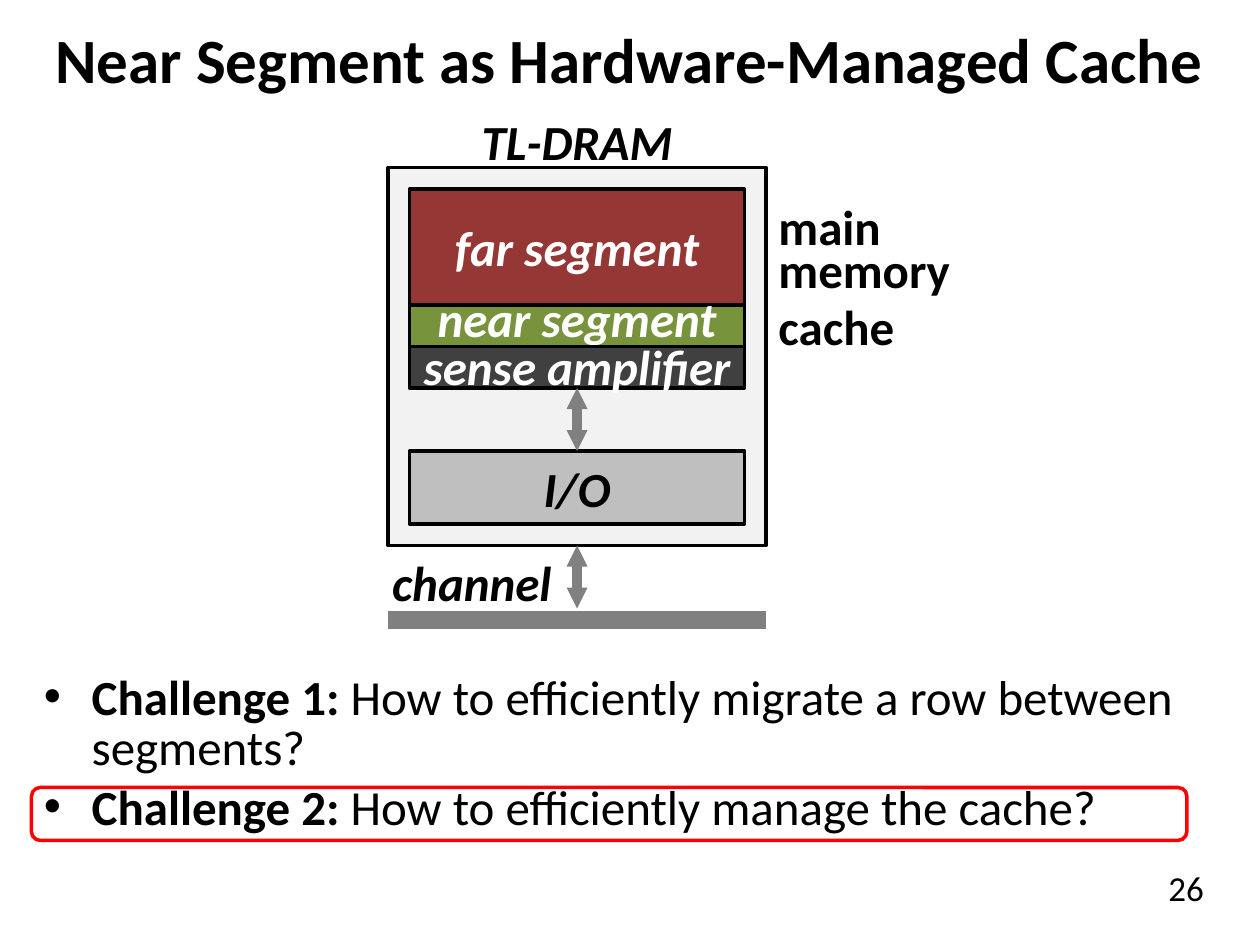
from lxml import etree
from pptx import Presentation
from pptx.dml.color import RGBColor
from pptx.enum.shapes import MSO_CONNECTOR, MSO_SHAPE
from pptx.enum.text import MSO_ANCHOR, PP_ALIGN
from pptx.oxml.ns import qn
from pptx.util import Inches, Pt

BLACK, WHITE, GRAY = "000000", "FFFFFF", "808080"


def color(hex_value):
    return RGBColor.from_string(hex_value)


def add_run(paragraph, text, size=28, fill=BLACK, bold=True, italic=False):
    run = paragraph.add_run()
    run.text = text
    font = run.font
    font.name, font.size = "Calibri", Pt(size)
    font.bold, font.italic = bold, italic
    font.color.rgb = color(fill)


def write(shape, text, align=PP_ALIGN.CENTER, anchor=MSO_ANCHOR.MIDDLE, **font):
    frame = shape.text_frame
    frame.word_wrap = True
    frame.vertical_anchor = anchor
    paragraph = frame.paragraphs[0]
    paragraph.alignment = align
    add_run(paragraph, text, **font)


def add_label(slide, text, left, top, width, height, **style):
    label = slide.shapes.add_textbox(
        Inches(left), Inches(top), Inches(width), Inches(height))
    write(label, text, **style)


def add_block(slide, left, top, width, height, fill=None, outline=BLACK,
              preset=MSO_SHAPE.RECTANGLE):
    block = slide.shapes.add_shape(
        preset, Inches(left), Inches(top), Inches(width), Inches(height))
    block.shadow.inherit = False
    if fill:
        block.fill.solid()
        block.fill.fore_color.rgb = color(fill)
    else:
        block.fill.background()
    block.line.color.rgb = color(outline)
    block.line.width = Pt(2)
    frame = block.text_frame
    frame.margin_left = frame.margin_right = 0
    frame.margin_top = frame.margin_bottom = 0
    return block


def add_line(slide, start, end, width, arrows=False):
    line = slide.shapes.add_connector(
        MSO_CONNECTOR.STRAIGHT, *(Inches(value) for value in start + end))
    line.line.color.rgb = color(GRAY)
    line.line.width = Pt(width)
    if arrows:
        outline = line.line._get_or_add_ln()
        for end_tag in ("a:headEnd", "a:tailEnd"):
            etree.SubElement(outline, qn(end_tag), type="triangle", w="sm", len="sm")
    etree.SubElement(line._element.spPr, qn("a:effectLst"))
    return line


def add_dram(slide, left, top, size):
    """Draw the DRAM chip as a square, with its title, labels and channel."""
    pad = 0.17
    inner_left, inner_width = left + pad, size - 2 * pad
    center, bottom, right = left + size / 2, top + size, left + size

    chip = add_block(slide, left, top, size, size, "F2F2F2")
    add_label(slide, "TL-DRAM", left, top - 0.42, size, 0.42, italic=True)

    segments = [
        ("far segment", 0.92, "953735", 0),
        ("near segment", 0.33, "77933C", 0.12),
        ("sense amplifier", 0.33, "404040", 0.02),
    ]
    segment_top = top + pad
    for name, height, fill, text_lift in segments:
        segment = add_block(slide, inner_left, segment_top, inner_width, height, fill)
        segment.text_frame.margin_bottom = Inches(text_lift)
        write(segment, name, fill=WHITE, italic=True)
        segment_top += height
    sense_amplifier = segment

    io_top = bottom - pad - 0.58
    io = add_block(slide, inner_left, io_top, inner_width, 0.58, "BFBFBF")
    write(io, "I/O", italic=True)

    io_link = add_line(slide, (center, io_top), (center, segment_top), 6, arrows=True)
    io_link.begin_connect(io, 0)
    io_link.end_connect(sense_amplifier, 2)

    add_line(slide, (left, bottom + 0.59), (right, bottom + 0.59), 10)
    channel_link = add_line(
        slide, (center, bottom + 0.5), (center, bottom), 6, arrows=True)
    channel_link.end_connect(chip, 2)
    add_label(slide, "channel", left - 0.25, bottom + 0.08, 1.83, 0.42, italic=True)

    for role, offset, height in (
            ("main", 0.25, 0.42), ("memory", 0.59, 0.42), ("cache", 1.09, 0.33)):
        add_label(slide, role, right, top + offset, 2.08, height, align=PP_ALIGN.LEFT)


def add_challenges(slide, left, top, width, height):
    challenges = slide.shapes.add_textbox(
        Inches(left), Inches(top), Inches(width), Inches(height))
    frame = challenges.text_frame
    frame.word_wrap = True
    frame.margin_top = 0
    questions = (
        "How to efficiently migrate a row between segments?",
        "How to efficiently manage the cache?",
    )
    for number, question in enumerate(questions, 1):
        paragraph = frame.paragraphs[0] if number == 1 else frame.add_paragraph()
        paragraph.line_spacing = 0.85
        paragraph.space_before = Pt(5.6)
        properties = paragraph._p.get_or_add_pPr()
        properties.set("marL", str(Inches(0.38)))
        properties.set("indent", str(-Inches(0.38)))
        etree.SubElement(properties, qn("a:buFont"), typeface="Arial")
        etree.SubElement(properties, qn("a:buChar"), char="•")
        add_run(paragraph, f"Challenge {number}: ")
        add_run(paragraph, question, bold=False)

    add_block(slide, left, top + 0.89, 9.17, 0.42, outline="FF0000",
              preset=MSO_SHAPE.ROUNDED_RECTANGLE)


def main():
    deck = Presentation()
    deck.slide_width, deck.slide_height = Inches(10), Inches(7.5)
    slide = deck.slides.add_slide(deck.slide_layouts[6])

    add_label(slide, "Near Segment as Hardware-Managed Cache", 0.34, 0, 9.66, 0.92,
              size=36, align=PP_ALIGN.LEFT)
    add_dram(slide, 3.08, 1.33, 3)
    add_challenges(slide, 0.25, 5.36, 9.67, 1.39)
    add_label(slide, "26", 8.83, 6.83, 1.17, 0.67, size=20, bold=False,
              anchor=MSO_ANCHOR.TOP)

    deck.save("out.pptx")


if __name__ == "__main__":
    main()
